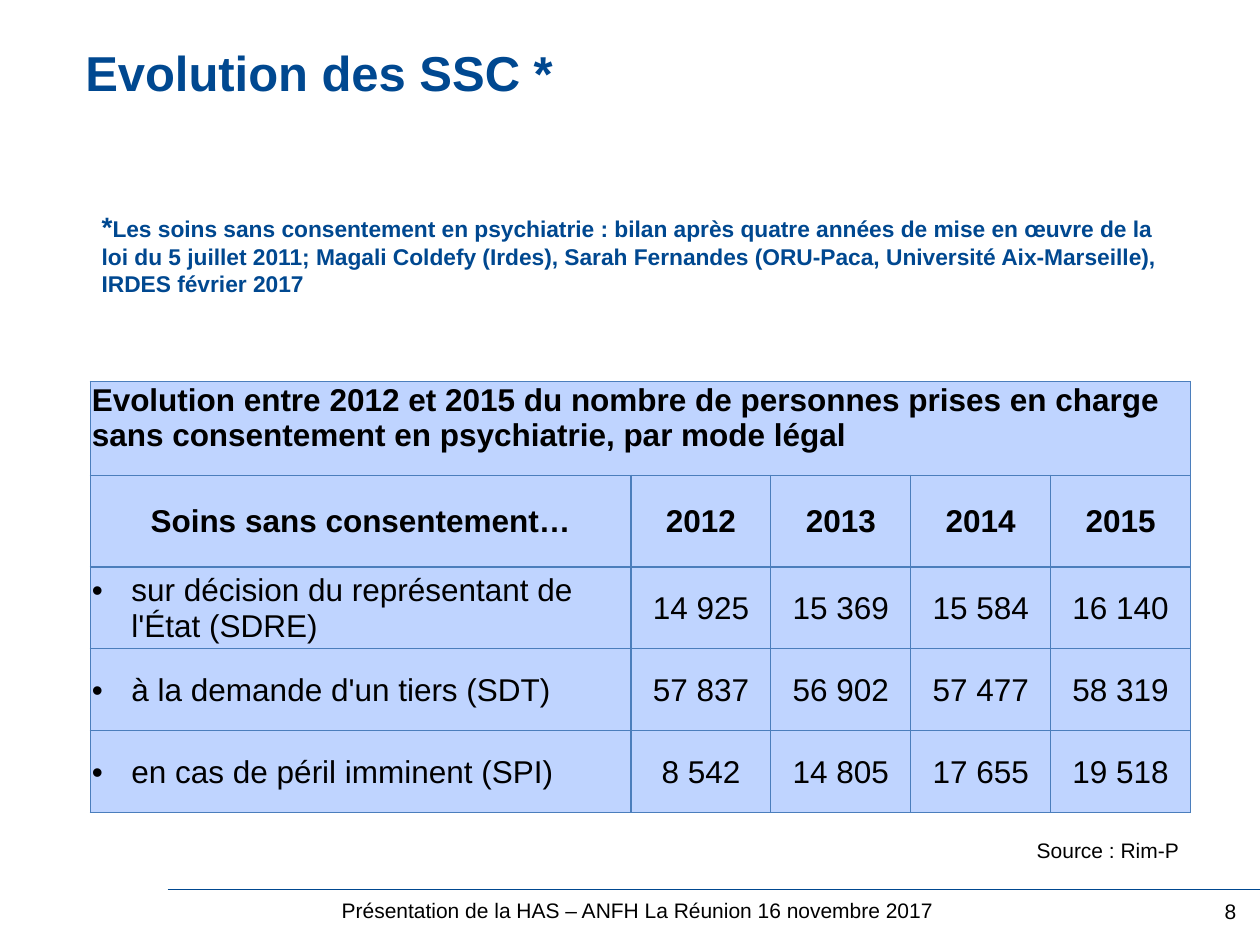
from lxml import etree
from pptx import Presentation
from pptx.dml.color import RGBColor
from pptx.enum.shapes import MSO_CONNECTOR
from pptx.enum.text import MSO_ANCHOR, MSO_AUTO_SIZE, PP_ALIGN
from pptx.oxml.ns import qn
from pptx.util import Cm, Pt

BLUE = RGBColor(0x00, 0x48, 0x90)
BLACK = RGBColor(0x00, 0x00, 0x00)
CELL_FILL = RGBColor(0xBF, 0xD4, 0xFF)
BORDER = RGBColor(0x4B, 0x7E, 0xBC)
FONT = "Arial"
LEFT, CENTER, RIGHT = PP_ALIGN.LEFT, PP_ALIGN.CENTER, PP_ALIGN.RIGHT
TOP, MIDDLE = MSO_ANCHOR.TOP, MSO_ANCHOR.MIDDLE
STRAIGHT = MSO_CONNECTOR.STRAIGHT
FIT_SHAPE = MSO_AUTO_SIZE.SHAPE_TO_FIT_TEXT

TABLE_TITLE = ("Evolution entre 2012 et 2015 du nombre de personnes prises en charge "
               "sans consentement en psychiatrie, par mode légal")
TABLE_ROWS = [
    [TABLE_TITLE, "", "", "", ""],
    ["Soins sans consentement…", "2012", "2013", "2014", "2015"],
    ["sur décision du représentant de l'État (SDRE)", "14 925", "15 369", "15 584", "16 140"],
    ["à la demande d'un tiers (SDT)", "57 837", "56 902", "57 477", "58 319"],
    ["en cas de péril imminent (SPI)", "8 542", "14 805", "17 655", "19 518"],
]
COLUMN_WIDTHS = [10.9] + [2.82] * 4
ROW_HEIGHTS = [1.89, 1.85, 1.65, 1.65, 1.65]
NOTE = ("Les soins sans consentement en psychiatrie : bilan après quatre années de mise "
        "en œuvre de la loi du 5 juillet 2011; Magali Coldefy (Irdes), Sarah Fernandes "
        "(ORU-Paca, Université Aix-Marseille),")


def format_run(run, size, color, bold=False):
    run.font.name = FONT
    run.font.size = Pt(size)
    run.font.bold = bold
    run.font.color.rgb = color


def add_run(paragraph, text, size, color, bold=False):
    run = paragraph.add_run()
    run.text = text
    format_run(run, size, color, bold)


def add_text_box(slide, left, top, width, height, align=LEFT, wrap=True):
    """Add an empty text box and return its text frame."""
    shape = slide.shapes.add_textbox(Cm(left), Cm(top), Cm(width), Cm(height))
    text_frame = shape.text_frame
    text_frame.word_wrap = wrap
    text_frame.paragraphs[0].alignment = align
    return text_frame


def add_title(slide):
    text_frame = add_text_box(slide, 1.47, 0, 21.59, 3.18)
    text_frame.vertical_anchor = MIDDLE
    text_frame.margin_bottom = Cm(0.4)
    add_run(text_frame.paragraphs[0], "Evolution des SSC *", 28, BLUE, True)


def add_note(slide):
    text_frame = add_text_box(slide, 1.8, 4.09, 22.23, 2.06)
    text_frame.auto_size = FIT_SHAPE
    paragraph = text_frame.paragraphs[0]
    add_run(paragraph, "*", 16, BLUE, True)
    add_run(paragraph, NOTE, 13, BLUE, True)
    paragraph.add_line_break()
    add_run(paragraph, "IRDES février 2017", 13, BLUE, True)


def add_label(slide, text, *box, **layout):
    text_frame = add_text_box(slide, *box, **layout)
    add_run(text_frame.paragraphs[0], text, 12, BLACK)


def add_footer_line(slide):
    line = slide.shapes.add_connector(STRAIGHT, Cm(3.38), Cm(17.93), Cm(25.4), Cm(17.93))
    line.line.color.rgb = BLUE
    line.line.width = Pt(0.75)
    etree.SubElement(line._element.spPr, qn("a:effectLst"))


def add_borders(cell):
    properties = cell._tc.get_or_add_tcPr()
    for side in ("lnL", "lnR", "lnT", "lnB"):
        line = etree.SubElement(properties, qn(f"a:{side}"), w=str(Pt(0.75)))
        fill = etree.SubElement(line, qn("a:solidFill"))
        etree.SubElement(fill, qn("a:srgbClr"), val=str(BORDER))


def add_bullet(paragraph):
    properties = paragraph._p.get_or_add_pPr()
    properties.set("marL", str(Cm(0.8)))
    properties.set("indent", str(Cm(-0.8)))
    etree.SubElement(properties, qn("a:buFont"), typeface=FONT)
    etree.SubElement(properties, qn("a:buChar"), char="•")


def fill_cell(cell, text, row, column):
    add_borders(cell)
    cell.fill.solid()
    cell.fill.fore_color.rgb = CELL_FILL
    cell.margin_left = cell.margin_right = cell.margin_top = Cm(0.03)
    cell.margin_bottom = 0
    cell.vertical_anchor = TOP if row == 0 else MIDDLE
    if not text:
        return
    paragraph = cell.text_frame.paragraphs[0]
    is_row_label = row > 1 and column == 0
    paragraph.alignment = LEFT if row == 0 or is_row_label else CENTER
    if is_row_label:
        add_bullet(paragraph)
    add_run(paragraph, text, 18, BLACK, bold=row < 2)


def add_care_table(slide):
    frame = slide.shapes.add_table(
        len(ROW_HEIGHTS), len(COLUMN_WIDTHS), Cm(1.82), Cm(7.69),
        Cm(sum(COLUMN_WIDTHS)), Cm(sum(ROW_HEIGHTS)))
    table = frame.table
    table.first_row = table.horz_banding = False
    for column, width in zip(table.columns, COLUMN_WIDTHS):
        column.width = Cm(width)
    for row, height in zip(table.rows, ROW_HEIGHTS):
        row.height = Cm(height)
    table.cell(0, 0).merge(table.cell(0, len(COLUMN_WIDTHS) - 1))
    for row, texts in enumerate(TABLE_ROWS):
        for column, text in enumerate(texts):
            fill_cell(table.cell(row, column), text, row, column)


def main():
    presentation = Presentation()
    presentation.slide_width = Cm(25.4)
    presentation.slide_height = Cm(19.05)
    slide = presentation.slides.add_slide(presentation.slide_layouts[6])
    add_footer_line(slide)
    add_label(slide, "Présentation de la HAS – ANFH La Réunion 16 novembre 2017",
              6.15, 17.96, 13.41, 0.77, align=CENTER)
    add_title(slide)
    add_care_table(slide)
    add_label(slide, "8", 19.89, 17.98, 5.28, 1.27, align=RIGHT)
    add_label(slide, "Source : Rim-P", 20.62, 16.76, 3.4, 0.77, align=RIGHT, wrap=False)
    add_note(slide)
    presentation.save("out.pptx")


if __name__ == "__main__":
    main()
